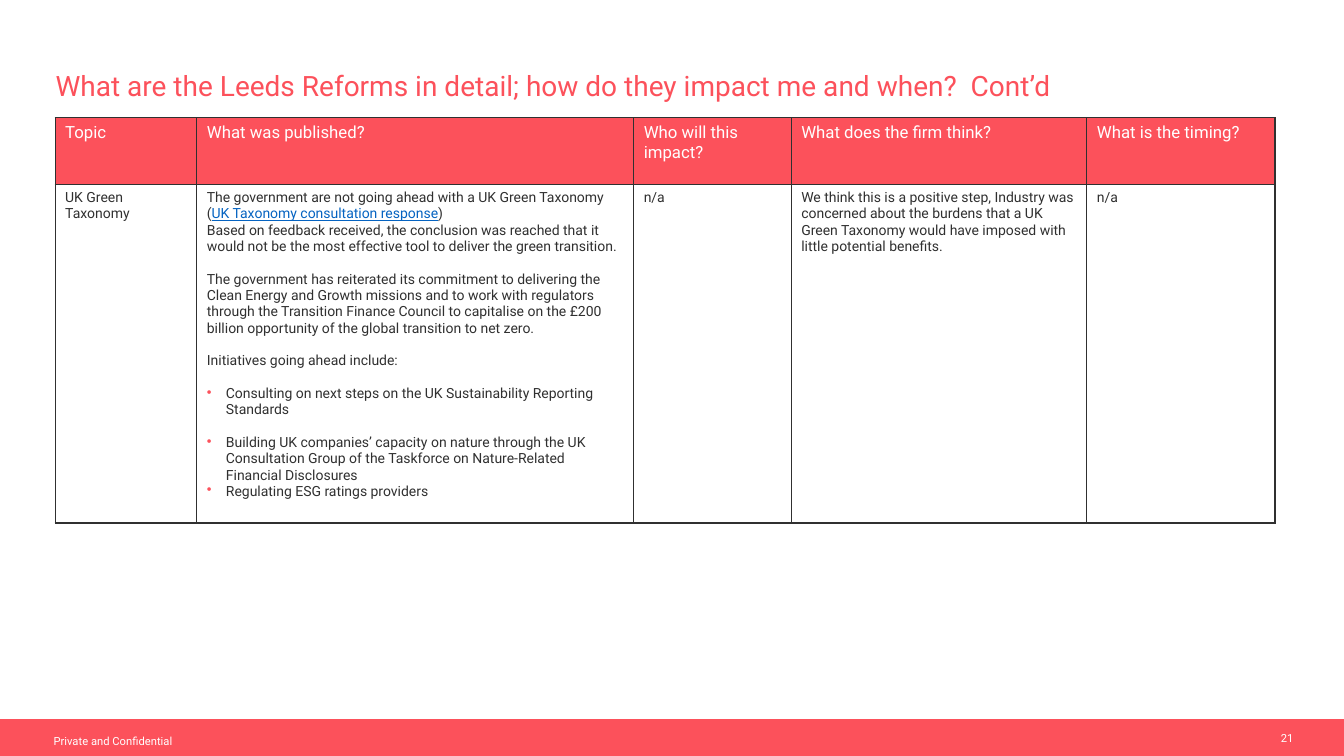
from dataclasses import dataclass

from lxml.etree import SubElement
from pptx import Presentation
from pptx.dml.color import RGBColor
from pptx.enum.shapes import MSO_SHAPE
from pptx.enum.text import MSO_ANCHOR, PP_ALIGN
from pptx.oxml.ns import qn
from pptx.util import Cm, Pt


@dataclass(frozen=True)
class Theme:
    font: str = "Roboto"
    coral: str = "FC515B"
    ink: str = "303030"
    link: str = "0563C1"
    white: str = "FFFFFF"
    title_size: int = 20
    header_size: int = 12
    body_size: int = 10
    footer_size: int = 8
    line_gap: float = 11.7
    bullet_indent: float = 0.48


@dataclass(frozen=True)
class Entry:
    text: str
    gap: bool = False
    bullet: bool = False
    link: str = ""
    tail: str = ""


HEADERS = ["Topic", "What was published?", "Who will this impact?",
           "What does the firm think?", "What is the timing?"]
TAXONOMY_ROW = [
    [Entry("UK Green Taxonomy")],
    [
        Entry("The government are not going ahead with a UK Green Taxonomy (",
              link="UK Taxonomy consultation response", tail=")"),
        Entry("Based on feedback received, the conclusion was reached that it would not be "
              "the most effective tool to deliver the green transition."),
        Entry("The government has reiterated its commitment to delivering the Clean Energy "
              "and Growth missions and to work with regulators through the Transition Finance "
              "Council to capitalise on the £200 billion opportunity of the global transition "
              "to net zero.", gap=True),
        Entry("Initiatives going ahead include:", gap=True),
        Entry("Consulting on next steps on the UK Sustainability Reporting Standards",
              gap=True, bullet=True),
        Entry("Building UK companies’ capacity on nature through the UK Consultation Group of "
              "the Taskforce on Nature-Related Financial Disclosures", gap=True, bullet=True),
        Entry("Regulating ESG ratings providers", bullet=True),
    ],
    [Entry("n/a")],
    [Entry("We think this is a positive step, Industry was concerned about the burdens that a "
           "UK Green Taxonomy would have imposed with little potential benefits.")],
    [Entry("n/a")],
]
COLUMN_WIDTHS = [3.57, 11.01, 3.97, 7.45, 4.74]
ROW_HEIGHTS = [1.68, 8.53]


class SlideBuilder:
    def __init__(self, slide, theme):
        self.slide = slide
        self.theme = theme

    def style_font(self, font, size, color):
        font.name = self.theme.font
        font.size = Pt(size)
        font.color.rgb = RGBColor.from_string(color)

    def bar(self, left, top, width, height, color):
        shape = self.slide.shapes.add_shape(
            MSO_SHAPE.RECTANGLE, Cm(left), Cm(top), Cm(width), Cm(height))
        shape.shadow.inherit = False
        shape.fill.solid()
        shape.fill.fore_color.rgb = RGBColor.from_string(color)
        shape.line.fill.background()

    def text(self, words, box, size, color, margins,
             align=PP_ALIGN.LEFT, anchor=MSO_ANCHOR.TOP):
        shape = self.slide.shapes.add_textbox(*[Cm(length) for length in box])
        frame = shape.text_frame
        frame.word_wrap = True
        frame.vertical_anchor = anchor
        (frame.margin_left, frame.margin_top,
         frame.margin_right, frame.margin_bottom) = [Cm(margin) for margin in margins]
        paragraph = frame.paragraphs[0]
        paragraph.text = words
        paragraph.alignment = align
        self.style_font(paragraph.font, size, color)

    def bullet(self, paragraph):
        indent = Cm(self.theme.bullet_indent)
        properties = paragraph._p.get_or_add_pPr()
        properties.set("marL", str(indent))
        properties.set("indent", str(-indent))
        bullet_color = SubElement(properties, qn("a:buClr"))
        SubElement(bullet_color, qn("a:srgbClr"), val=self.theme.coral)
        SubElement(properties, qn("a:buChar"), char="•")

    def borders(self, cell):
        properties = cell._tc.get_or_add_tcPr()
        for side in ("lnL", "lnR", "lnT", "lnB"):
            line = SubElement(properties, qn(f"a:{side}"), w=str(Pt(1)))
            fill = SubElement(line, qn("a:solidFill"))
            SubElement(fill, qn("a:srgbClr"), val=self.theme.ink)

    def cell(self, cell, entries, size, color, fill):
        self.borders(cell)
        cell.fill.solid()
        cell.fill.fore_color.rgb = RGBColor.from_string(fill)
        frame = cell.text_frame
        for index, entry in enumerate(entries):
            paragraph = frame.add_paragraph() if index else frame.paragraphs[0]
            if entry.bullet:
                self.bullet(paragraph)
            if entry.gap:
                paragraph.space_before = Pt(self.theme.line_gap)
            self.style_font(paragraph.font, size, color)
            paragraph.add_run().text = entry.text
            if entry.link:
                link = paragraph.add_run()
                link.text = entry.link
                link.font.underline = True
                link.font.color.rgb = RGBColor.from_string(self.theme.link)
                paragraph.add_run().text = entry.tail

    def table(self, left, top, headers, body):
        theme = self.theme
        table = self.slide.shapes.add_table(
            2, len(headers), Cm(left), Cm(top),
            Cm(sum(COLUMN_WIDTHS)), Cm(sum(ROW_HEIGHTS))).table
        table.first_row = False
        table.horz_banding = False
        for column, width in zip(table.columns, COLUMN_WIDTHS):
            column.width = Cm(width)
        for row, height in zip(table.rows, ROW_HEIGHTS):
            row.height = Cm(height)
        for index, (header, entries) in enumerate(zip(headers, body)):
            self.cell(table.cell(0, index), [Entry(header)],
                      theme.header_size, theme.white, theme.coral)
            self.cell(table.cell(1, index), entries,
                      theme.body_size, theme.ink, theme.white)


def main():
    presentation = Presentation()
    presentation.slide_width = Cm(33.87)
    presentation.slide_height = Cm(19.05)
    theme = Theme()
    builder = SlideBuilder(
        presentation.slides.add_slide(presentation.slide_layouts[6]), theme)

    # Footer
    builder.bar(0, 18.12, 33.87, 0.93, theme.coral)
    builder.text("Private and Confidential", (1.35, 18.5, 4.78, 0.33),
                 theme.footer_size, theme.white, (0, 0, 0, 0))
    builder.text("21", (31.45, 18.23, 1.4, 0.74), theme.footer_size, theme.white,
                 (0.25, 0.13, 0.25, 0.13), PP_ALIGN.RIGHT, MSO_ANCHOR.MIDDLE)

    # Title
    builder.text("What are the Leeds Reforms in detail; how do they impact me and when?  Cont’d",
                 (1.4, 1.6, 31.04, 1.12), theme.title_size, theme.coral,
                 (0, 0.13, 0.13, 0.13))

    # Reform table
    builder.table(1.39, 2.97, HEADERS, TAXONOMY_ROW)

    presentation.save("out.pptx")


if __name__ == "__main__":
    main()
